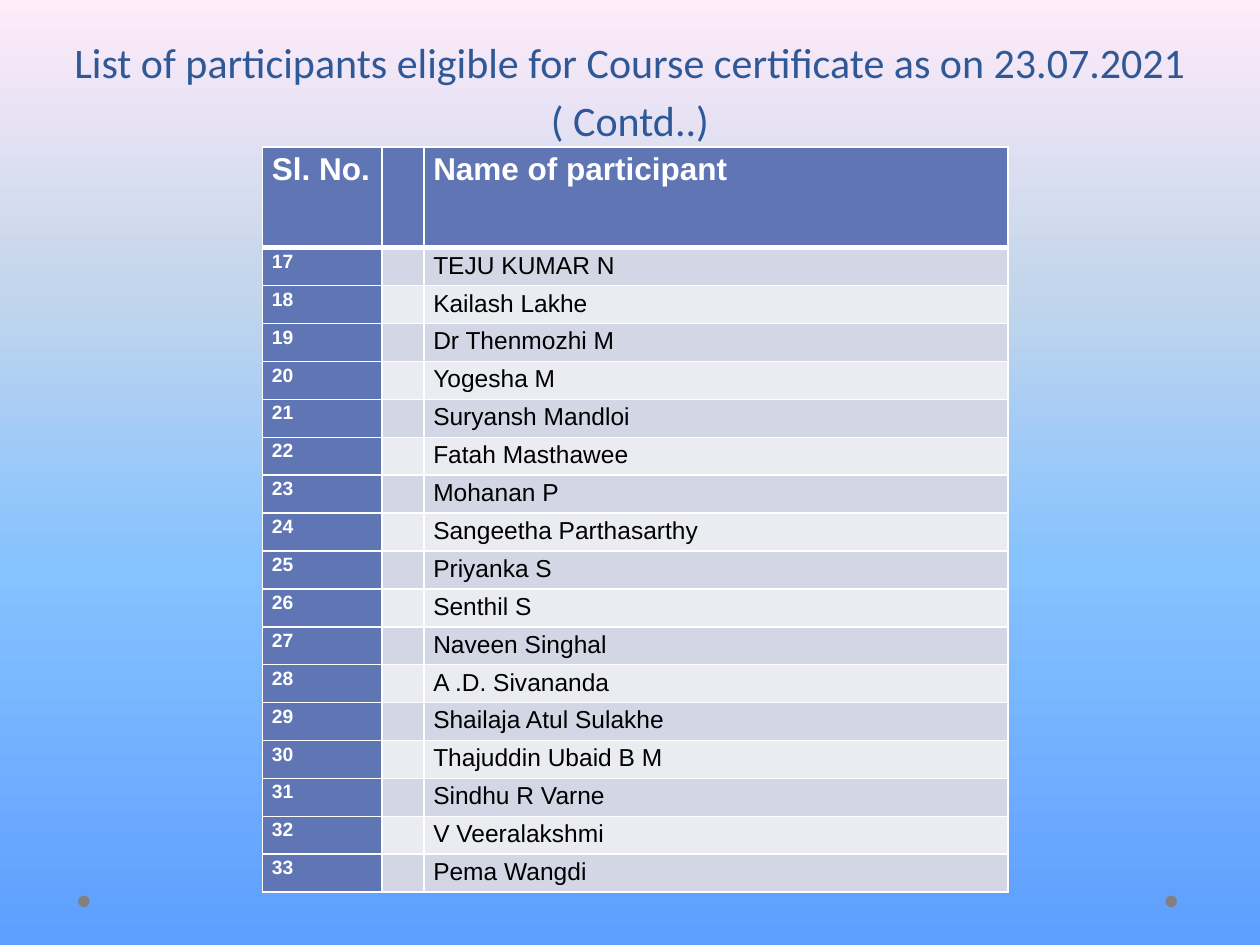
from lxml import etree
from pptx import Presentation
from pptx.dml.color import RGBColor
from pptx.enum import shapes, text
from pptx.oxml.ns import qn
from pptx.util import Pt

WHITE = RGBColor(0xFF, 0xFF, 0xFF)
BLACK = RGBColor(0, 0, 0)
NAVY = RGBColor(0x2F, 0x58, 0x97)
GRAY = RGBColor(0x80, 0x80, 0x80)
HEADER = RGBColor(0x60, 0x76, 0xB4)
BAND_DARK = RGBColor(0xD2, 0xD6, 0xE5)
BAND_LIGHT = RGBColor(0xEA, 0xEC, 0xF2)
SKY = [(0, "5E9EFF"), (40, "85C2FF"), (70, "C4D6EB"), (100, "FFEBFA")]
FIRST_NUMBER = 17
PARTICIPANTS = [
    "TEJU KUMAR N", "Kailash Lakhe", "Dr Thenmozhi M", "Yogesha M",
    "Suryansh Mandloi", "Fatah Masthawee", "Mohanan P",
    "Sangeetha Parthasarthy", "Priyanka S", "Senthil S", "Naveen Singhal",
    "A .D. Sivananda", "Shailaja Atul Sulakhe", "Thajuddin Ubaid B M",
    "Sindhu R Varne", "V Veeralakshmi", "Pema Wangdi",
]


def write(frame, words, size, color, font="Arial", bold=False, align=None, after=10):
    paragraph = frame.paragraphs[0]
    paragraph.line_spacing = 1.15
    paragraph.space_after = Pt(after)
    paragraph.alignment = align
    if not words:
        end = etree.SubElement(paragraph._p, qn("a:endParaRPr"))
        end.set("sz", str(size * 100))
        return
    paragraph.text = words
    for run in paragraph.runs:
        run.font.size = Pt(size)
        run.font.name = font
        run.font.bold = bold
        run.font.color.rgb = color


def add_borders(cell, widths):
    properties = cell._tc.get_or_add_tcPr()
    for position, (side, width) in enumerate(widths.items()):
        line = etree.Element(qn(f"a:ln{side}"), w=str(Pt(width)))
        fill = etree.SubElement(line, qn("a:solidFill"))
        etree.SubElement(fill, qn("a:srgbClr"), val=str(WHITE))
        properties.insert(position, line)


prs = Presentation()
prs.slide_width, prs.slide_height = Pt(720), Pt(540)
slide = prs.slides.add_slide(prs.slide_layouts[5])

sky = slide.background.fill
sky.gradient()
sky.gradient_angle = 90
stops = slide.element.find(".//" + qn("a:gsLst"))
for stop in list(stops):
    stops.remove(stop)
for percent, color in SKY:
    stop = etree.SubElement(stops, qn("a:gs"), pos=str(percent * 1000))
    etree.SubElement(stop, qn("a:srgbClr"), val=color)

for left in (666, 44.6):
    dot = slide.shapes.add_shape(shapes.MSO_SHAPE.OVAL, Pt(left), Pt(511.8), Pt(6.6), Pt(6.6))
    dot.shadow.inherit = False
    dot.fill.solid()
    dot.fill.fore_color.rgb = GRAY
    dot.line.fill.background()

title = slide.shapes.title
title.left, title.top, title.width, title.height = Pt(18), Pt(16), Pt(684), Pt(67)
heading = title.text_frame
heading.word_wrap = True
heading.auto_size = text.MSO_AUTO_SIZE.NONE
heading.vertical_anchor = text.MSO_ANCHOR.BOTTOM
heading.margin_top = heading.margin_bottom = 0
write(heading,
      "List of participants eligible for Course certificate as on 23.07.2021\v( Contd..)",
      size=24, color=NAVY, font="Calibri", align=text.PP_ALIGN.CENTER, after=0)

rows = [("Sl. No.", "", "Name of participant")]
rows += [(str(number), "", name) for number, name in enumerate(PARTICIPANTS, FIRST_NUMBER)]
roster = slide.shapes.add_table(len(rows), 3, Pt(150), Pt(84), Pt(426), Pt(426)).table
for column, width in zip(roster.columns, (68.4, 23.8, 333.8)):
    column.width = Pt(width)

for r, row in enumerate(rows):
    roster.rows[r].height = Pt(21.67 if r else 57.6)
    for c, words in enumerate(row):
        cell = roster.cell(r, c)
        cell.margin_left = cell.margin_right = Pt(5.4)
        cell.margin_top = cell.margin_bottom = 0
        strong = r == 0 or c == 0
        band = BAND_DARK if r % 2 else BAND_LIGHT
        cell.fill.solid()
        cell.fill.fore_color.rgb = HEADER if strong else band
        size = 18 if r == 0 else 14 if c == 2 else 11
        write(cell.text_frame, words, size=size, color=WHITE if strong else BLACK, bold=strong)
        add_borders(cell, {"L": 1, "R": 1, "T": 3 if r == 1 else 1, "B": 1 if r else 3})

prs.save("out.pptx")
